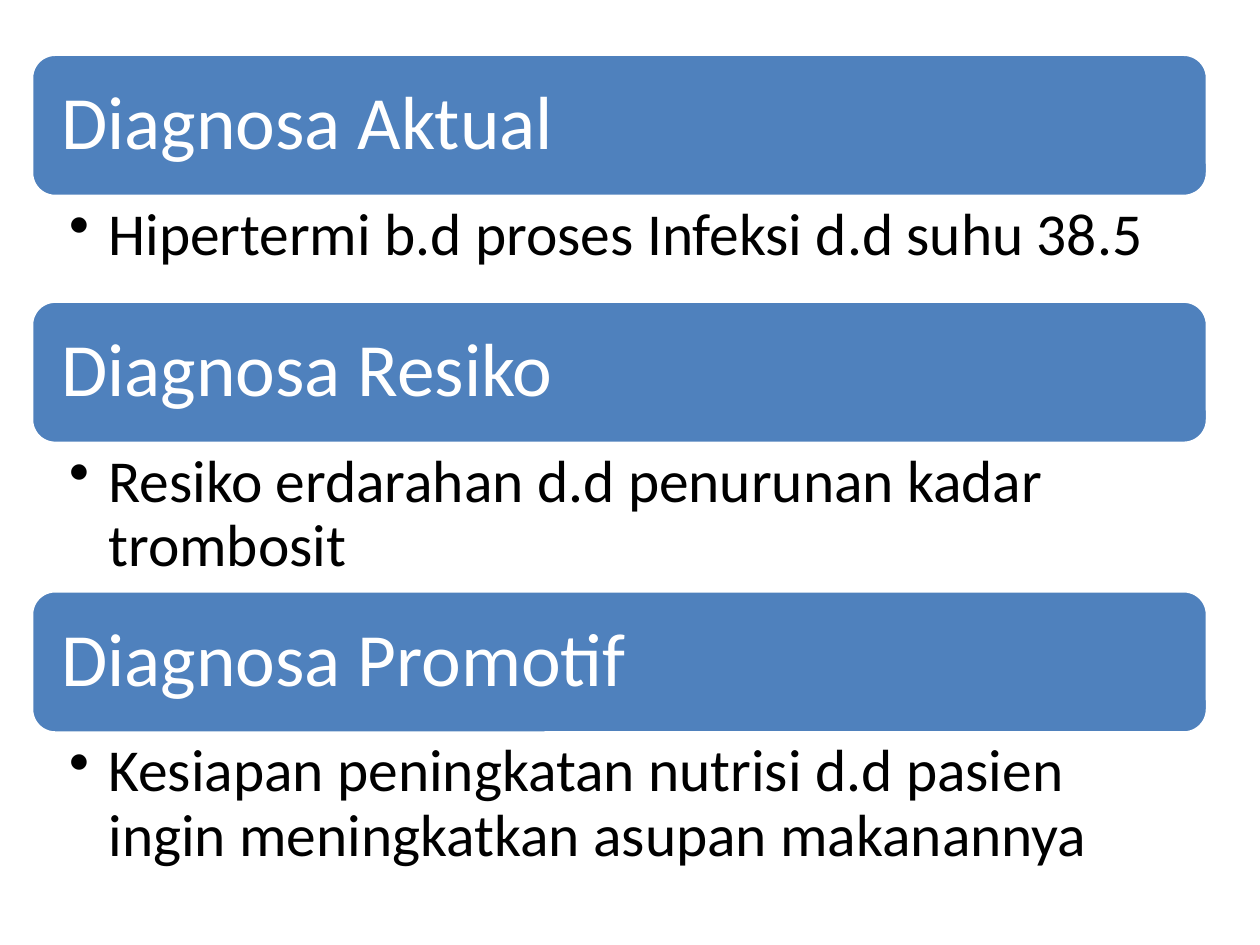
from pptx import Presentation
from pptx.dml.color import RGBColor
from pptx.enum import shapes, text
from pptx.oxml import parse_xml
from pptx.oxml.ns import nsdecls
from pptx.util import Pt

# Content: heading, example, height of the example area
ITEMS = [
    ("Diagnosa Aktual", "Hipertermi b.d proses Infeksi d.d suhu 38.5", 59.8),
    ("Diagnosa Resiko", "Resiko erdarahan d.d penurunan kadar trombosit", 84.2),
    ("Diagnosa Promotif",
     "Kesiapan peningkatan nutrisi d.d pasien ingin meningkatkan asupan makanannya", 84.2),
]
LEFT, TOP, WIDTH, HEAD = 18, 31, 672, 81.3
INDENT = 22.5


def color(code):
    return RGBColor.from_string(code)


def write(shape, words, size, code, pads, after):
    frame = shape.text_frame
    frame.word_wrap = True
    frame.margin_left, frame.margin_top, frame.margin_right, frame.margin_bottom = map(Pt, pads)
    para = frame.paragraphs[0]
    para.text = words
    para.alignment = text.PP_ALIGN.LEFT
    para.line_spacing = 0.9
    para.space_after = Pt(after)
    para.font.name = "Calibri"
    para.font.size = Pt(size)
    para.font.color.rgb = color(code)
    return para


def add_head(slide, top, words):
    bar = slide.shapes.add_shape(shapes.MSO_SHAPE.ROUNDED_RECTANGLE,
                                 Pt(LEFT), Pt(top), Pt(WIDTH), Pt(HEAD))
    bar.shadow.inherit = False
    bar.fill.solid()
    bar.fill.fore_color.rgb = color("4F81BD")
    bar.line.color.rgb = color("FFFFFF")
    bar.line.width = Pt(2)
    bar.text_frame.vertical_anchor = text.MSO_ANCHOR.MIDDLE
    write(bar, words, 43, "FFFFFF", (13, 13, 13, 13), 15)


def add_body(slide, top, high, words):
    box = slide.shapes.add_textbox(Pt(LEFT), Pt(top), Pt(WIDTH), Pt(high))
    para = write(box, words, 34, "000000", (21.5, 4.3, 24, 4.3), 7)
    para.level = 1
    # Hanging bullet
    props = para._p.get_or_add_pPr()
    props.set("marL", str(Pt(INDENT)))
    props.set("indent", str(Pt(-INDENT)))
    mark = parse_xml(f'<a:buChar {nsdecls("a")} char="•"/>')
    props.insert_element_before(mark, "a:tabLst", "a:defRPr", "a:extLst")


def main():
    deck = Presentation()
    deck.slide_width, deck.slide_height = Pt(720), Pt(540)
    slide = deck.slides.add_slide(deck.slide_layouts[6])

    # Stack each heading bar and its example
    top = TOP
    for head, body, high in ITEMS:
        add_head(slide, top, head)
        add_body(slide, top + HEAD, high, body)
        top += HEAD + high

    deck.save("out.pptx")


if __name__ == "__main__":
    main()
